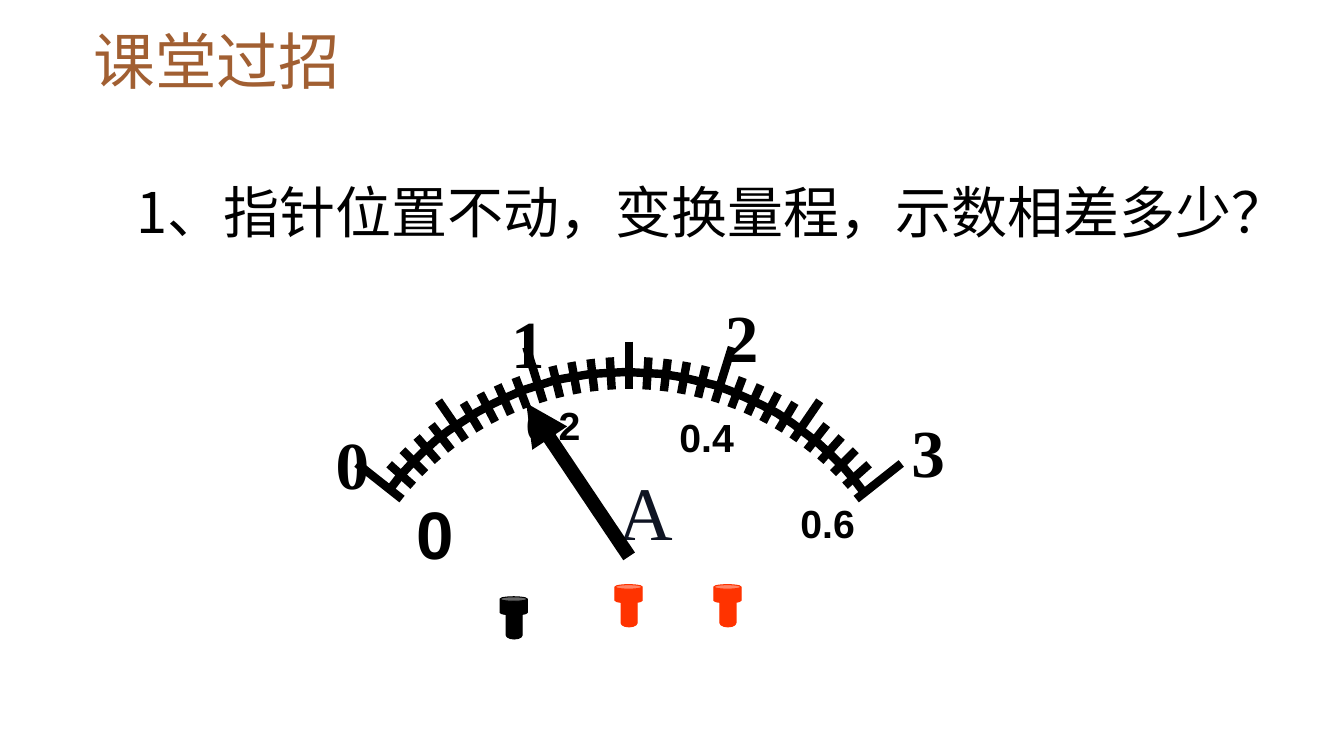
import math

from lxml import etree
from pptx import Presentation
from pptx.dml.color import RGBColor
from pptx.enum.shapes import MSO_CONNECTOR, MSO_SHAPE
from pptx.enum.text import MSO_ANCHOR, MSO_AUTO_SIZE, PP_ALIGN
from pptx.oxml.ns import qn
from pptx.util import Emu, Pt

LINE, CAN = MSO_CONNECTOR.STRAIGHT, MSO_SHAPE.CAN
TOP, GROW, FIXED = MSO_ANCHOR.TOP, MSO_AUTO_SIZE.SHAPE_TO_FIT_TEXT, MSO_AUTO_SIZE.NONE
LEFT, JUSTIFY = PP_ALIGN.LEFT, PP_ALIGN.JUSTIFY

EMU_PER_PX = 9144  # 100 px to the inch
COLOURS = {"title": "A15F32", "ink": "000000", "unit": "0F1423", "red": "FF3300"}
HEADING, SERIF, SANS = "Noto Sans CJK SC", "Times New Roman", "Arial"
PLAIN_INSETS = (10, 5, 10, 5)
DIAL_INSETS = (0, 8, 0, 0)

DIAL_CENTRE = (624, 673)
INNER_RADIUS = 287
SWEEP = 51.7  # degrees from the vertical to either end of the scale
DIVISIONS = 30


def px(value):
    return Emu(round(value * EMU_PER_PX))


def colour(name):
    return RGBColor.from_string(COLOURS[name])


def dial_point(radius, angle):
    x, y = DIAL_CENTRE
    return x + radius * math.sin(angle), y - radius * math.cos(angle)


def tick_radius(index):
    if index % 10 == 0:
        return 344
    return 334 if index % 5 == 0 else 319


def bezier(points, steps=16):
    """Return points along a cubic curve, without its first point."""
    curve = []
    for step in range(1, steps + 1):
        t = step / steps
        weights = ((1 - t) ** 3, 3 * t * (1 - t) ** 2, 3 * t * t * (1 - t), t ** 3)
        curve.append(tuple(sum(w * p[axis] for w, p in zip(weights, points))
                           for axis in (0, 1)))
    return curve


class SlidePainter:
    """Holds the slide and draws each kind of element on it."""

    def __init__(self, slide):
        self.slide = slide

    def text(self, words, left, top, width, height, *, size, font, ink="ink",
             bold=False, align=LEFT, insets=PLAIN_INSETS, fit=GROW,
             spacing=None, before=0):
        box = self.slide.shapes.add_textbox(px(left), px(top), px(width), px(height))
        frame = box.text_frame
        frame.word_wrap = True
        frame.auto_size = fit
        frame.vertical_anchor = TOP
        frame.margin_left, frame.margin_top, frame.margin_right, frame.margin_bottom = map(px, insets)
        para = frame.paragraphs[0]
        para.alignment = align
        para.space_before = Pt(before)
        if spacing:
            para.line_spacing = spacing
        span = para.add_run()
        span.text = words
        span.font.name, span.font.size, span.font.bold = font, Pt(size), bold
        span.font.color.rgb = colour(ink)
        etree.SubElement(span.font._element, qn("a:ea"), typeface=font)

    def line(self, start, end, weight, arrow=False):
        line = self.slide.shapes.add_connector(LINE, *map(px, (*start, *end)))
        line.line.color.rgb = colour("ink")
        line.line.width = Pt(weight)
        if arrow:
            etree.SubElement(line.line._get_or_add_ln(), qn("a:tailEnd"), type="triangle")
        etree.SubElement(line._element.spPr, qn("a:effectLst"))

    def curve(self, points, weight):
        builder = self.slide.shapes.build_freeform(*points[0], scale=EMU_PER_PX)
        builder.add_line_segments(points[1:], close=False)
        shape = builder.convert_to_shape()
        shape.shadow.inherit = False
        shape.fill.background()
        shape.line.color.rgb = colour("ink")
        shape.line.width = Pt(weight)

    def can(self, left, top, width, height, ink, rim):
        shape = self.slide.shapes.add_shape(CAN, px(left), px(top), px(width), px(height))
        shape.adjustments[0] = rim
        shape.shadow.inherit = False
        shape.fill.solid()
        shape.fill.fore_color.rgb = colour(ink)
        shape.line.color.rgb = colour(ink)
        shape.line.width = Pt(0.75)

    def terminal(self, left, top, ink):
        self.can(left + 6, top + 6, 16, 36, ink, 0.5)
        self.can(left, top, 27, 18, ink, 0.25)


def draw_scale(painter):
    for index in range(DIVISIONS + 1):
        angle = math.radians(SWEEP * (2 * index / DIVISIONS - 1))
        painter.line(dial_point(tick_radius(index), angle),
                     dial_point(INNER_RADIUS, angle), 6)
    start, crown, end = (387, 485), (621, 369), (858, 490)
    left_half = bezier((start, (440, 415), (525, 369), crown))
    right_half = bezier((crown, (719, 369), (805, 417), end))
    painter.curve([start, *left_half, *right_half], 6)


def draw_labels(painter):
    for words, left, top in (("0", 333, 411), ("1", 507, 291),
                             ("2", 719, 285), ("3", 904, 399)):
        painter.text(words, left, top, 46, 73, size=48, font=SERIF, bold=True,
                     align=JUSTIFY, insets=DIAL_INSETS, fit=FIXED)
    painter.text("A", 613, 453, 65, 73, size=54, font=SERIF, ink="unit",
                 align=JUSTIFY, insets=DIAL_INSETS, fit=FIXED)
    for words, left, top, width, height, size in (
            ("0.2", 512, 393, 87, 57, 28), ("0.4", 664, 405, 82, 57, 28),
            ("0.6", 784, 490, 82, 57, 28), ("0", 403, 484, 54, 103, 48)):
        painter.text(words, left, top, width, height, size=size, font=SANS,
                     bold=True, before=3)


def main():
    deck = Presentation()
    deck.slide_width, deck.slide_height = px(1333), px(750)
    painter = SlidePainter(deck.slides.add_slide(deck.slide_layouts[6]))

    painter.text("课堂过招", 83, 18, 416, 84, size=44, font=HEADING, ink="title")
    painter.text("1、指针位置不动，变换量程，示数相差多少？", 126, 138, 1180, 111,
                 size=40, font=HEADING, spacing=1.5)
    draw_scale(painter)
    draw_labels(painter)
    for left, top, ink in ((610, 580, "red"), (496, 592, "ink"), (708, 580, "red")):
        painter.terminal(left, top, ink)
    painter.line((624, 552), (522, 400), 10, arrow=True)

    deck.save("out.pptx")


if __name__ == "__main__":
    main()
